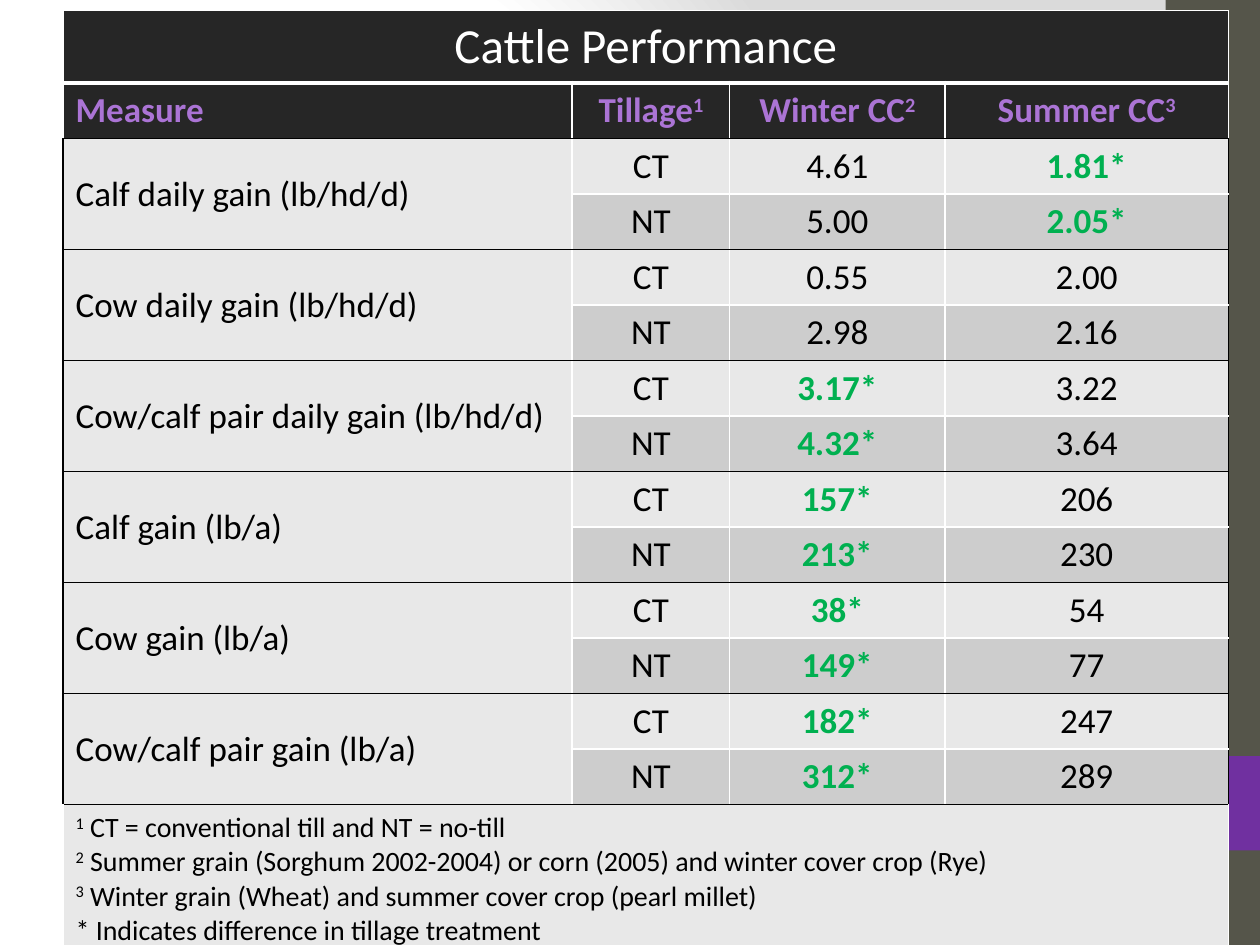
from dataclasses import dataclass

from lxml import etree
from pptx import Presentation
from pptx.dml.color import RGBColor
from pptx.enum.shapes import MSO_SHAPE
from pptx.enum.text import MSO_ANCHOR, PP_ALIGN
from pptx.oxml import parse_xml
from pptx.oxml.ns import qn
from pptx.util import Pt

RECT = MSO_SHAPE.RECTANGLE
TOP, MID, LOW = MSO_ANCHOR.TOP, MSO_ANCHOR.MIDDLE, MSO_ANCHOR.BOTTOM
LEFT, CENTER = PP_ALIGN.LEFT, PP_ALIGN.CENTER


@dataclass(frozen=True)
class Theme:
    font: str = "Calibri"
    white: str = "FFFFFF"
    black: str = "000000"
    dark: str = "262626"
    light: str = "E8E8E8"
    band: str = "CDCDCD"
    lilac: str = "AB74D5"
    green: str = "00B050"
    olive: str = "55554A"
    purple: str = "7030A0"
    haze: str = "DADADA"
    title: int = 28
    body: int = 20
    note: int = 16


THEME = Theme()
WIDTHS = (291, 90, 123, 162)
ROW = 29.5
HEADS = (("Measure", ""), ("Tillage", "1"), ("Winter CC", "2"), ("Summer CC", "3"))
GROUPS = (
    ("Calf daily gain (lb/hd/d)", ("4.61", "1.81*"), ("5.00", "2.05*")),
    ("Cow daily gain (lb/hd/d)", ("0.55", "2.00"), ("2.98", "2.16")),
    ("Cow/calf pair daily gain (lb/hd/d)", ("3.17*", "3.22"), ("4.32*", "3.64")),
    ("Calf gain (lb/a)", ("157*", "206"), ("213*", "230")),
    ("Cow gain (lb/a)", ("38*", "54"), ("149*", "77")),
    ("Cow/calf pair gain (lb/a)", ("182*", "247"), ("312*", "289")),
)
NOTES = (
    ("1", " CT = conventional till and NT = no-till"),
    ("2", " Summer grain (Sorghum 2002-2004) or corn (2005) and winter cover crop (Rye)"),
    ("3", " Winter grain (Wheat) and summer cover crop (pearl millet)"),
    ("", "* Indicates difference in tillage treatment"),
)


def add_run(para, text, size, color, bold=False, raised=False):
    if not text:
        return
    run = para.add_run()
    run.text = text
    font = run.font
    font.name, font.size, font.bold = THEME.font, Pt(size), bold
    font.color.rgb = RGBColor.from_string(color)
    if raised:
        run._r.get_or_add_rPr().set("baseline", "30000")


def style_cell(cell, fill, anchor, align=LEFT, **edges):
    cell.fill.solid()
    cell.fill.fore_color.rgb = RGBColor.from_string(fill)
    cell.vertical_anchor = anchor
    props = cell._tc.get_or_add_tcPr()
    for spot, side in enumerate("LRTB"):
        color, width = edges.get(side, (THEME.white, 1))
        line = etree.Element(qn(f"a:ln{side}"), w=str(Pt(width)))
        solid = etree.SubElement(line, qn("a:solidFill"))
        etree.SubElement(solid, qn("a:srgbClr"), val=color)
        props.insert(spot, line)
    para = cell.text_frame.paragraphs[0]
    para.alignment = align
    return para


def fill_head(grid):
    last = len(WIDTHS) - 1
    for col, (text, mark) in enumerate(HEADS):
        para = style_cell(grid.cell(0, col), THEME.dark, LOW, CENTER, B=(THEME.white, 3))
        if col == 0:
            add_run(para, "Cattle Performance", THEME.title, THEME.white)
        align = CENTER if col else LEFT
        para = style_cell(grid.cell(1, col), THEME.dark, LOW, align,
                          T=(THEME.white, 3), B=(THEME.black, 1))
        add_run(para, text, THEME.body, THEME.lilac, True)
        add_run(para, mark, THEME.body, THEME.lilac, True, True)
    grid.cell(0, 0).merge(grid.cell(0, last))


def fill_group(grid, top, name, pairs):
    ink = (THEME.black, 1)
    for step, (kind, pair) in enumerate(zip(("CT", "NT"), pairs)):
        row = top + step
        para = style_cell(grid.cell(row, 0), THEME.light, MID, L=ink, T=ink, B=ink)
        if step == 0:
            add_run(para, name, THEME.body, THEME.black)
        edges = {"B": ink} if step else {"T": ink}
        for col, text in enumerate((kind, *pair), 1):
            side = {"R": ink} if col == len(WIDTHS) - 1 else {}
            fill = THEME.band if step else THEME.light
            para = style_cell(grid.cell(row, col), fill, MID, CENTER, **edges, **side)
            star = text.endswith("*")
            color = THEME.green if star else THEME.black
            add_run(para, text, THEME.body, color, star)
    grid.cell(top, 0).merge(grid.cell(top + 1, 0))


def fill_notes(grid, row):
    for col in range(len(WIDTHS)):
        style_cell(grid.cell(row, col), THEME.light, TOP, T=(THEME.black, 1))
    cell = grid.cell(row, 0)
    cell.merge(grid.cell(row, len(WIDTHS) - 1))
    frame = cell.text_frame
    for spot, (mark, text) in enumerate(NOTES):
        para = frame.add_paragraph() if spot else frame.paragraphs[0]
        add_run(para, mark, THEME.note, THEME.black, raised=True)
        add_run(para, text, THEME.note, THEME.black)


def add_grid(slide, left, top):
    count = 3 + 2 * len(GROUPS)
    frame = slide.shapes.add_table(count, len(WIDTHS), Pt(left), Pt(top),
                                   Pt(sum(WIDTHS)), Pt(count * ROW))
    grid = frame.table
    for col, width in zip(grid.columns, WIDTHS):
        col.width = Pt(width)
    for row in grid.rows:
        row.height = Pt(ROW)
    fill_head(grid)
    for spot, (name, *pairs) in enumerate(GROUPS):
        fill_group(grid, 2 + 2 * spot, name, pairs)
    fill_notes(grid, count - 1)


def add_side(slide, left, top, width, height):
    parts = ((top, height, THEME.olive), (top + 0.8 * height, width, THEME.purple))
    for start, tall, color in parts:
        bar = slide.shapes.add_shape(RECT, Pt(left), Pt(start), Pt(width), Pt(tall))
        bar.shadow.inherit = False
        bar.fill.solid()
        bar.fill.fore_color.rgb = RGBColor.from_string(color)
        bar.line.fill.background()


def set_back(slide):
    fill = slide.background.fill
    fill.solid()
    fill.fore_color.rgb = RGBColor.from_string(THEME.white)
    props = slide._element.cSld.find(qn("p:bg")).find(qn("p:bgPr"))
    stops = "".join(
        f'<a:gs pos="{spot * 1000}"><a:srgbClr val="{color}"/></a:gs>'
        for spot, color in ((0, THEME.white), (75, THEME.white), (100, THEME.haze)))
    shade = parse_xml(
        '<a:gradFill xmlns:a="http://schemas.openxmlformats.org/drawingml/2006/main"'
        f' rotWithShape="1"><a:gsLst>{stops}</a:gsLst><a:path path="circle">'
        '<a:fillToRect l="20000" t="50000" r="100000" b="50000"/></a:path></a:gradFill>')
    props.replace(props.find(qn("a:solidFill")), shade)


def main():
    deck = Presentation()
    deck.slide_width, deck.slide_height = Pt(720), Pt(540)
    slide = deck.slides.add_slide(deck.slide_layouts[6])
    set_back(slide)
    add_side(slide, 666, 0, 54, 540)
    add_grid(slide, 36, 6)
    deck.save("out.pptx")


if __name__ == "__main__":
    main()
